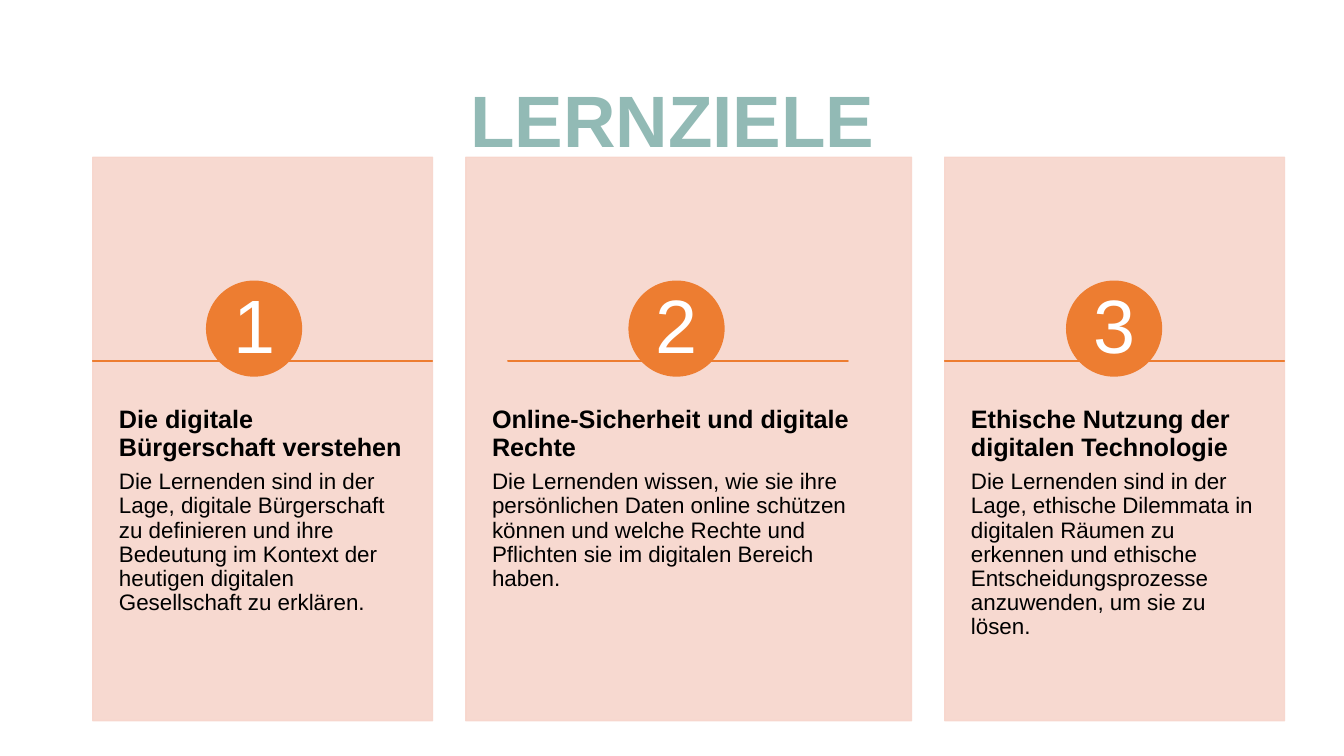
import lxml.etree
import pptx
import pptx.dml.color
import pptx.enum.shapes
import pptx.enum.text
import pptx.oxml.ns
import pptx.util

Inches = pptx.util.Inches
Pt = pptx.util.Pt
SHAPES = pptx.enum.shapes.MSO_SHAPE
ALIGN = pptx.enum.text.PP_ALIGN
ANCHOR = pptx.enum.text.MSO_ANCHOR

COLOURS = {"title": "92BAB5", "card": "F7D5CB", "accent": "ED7D31",
           "text": "000000", "number": "FFFFFF"}
FONT = "Arial"
CARD_LEFT, CARD_TOP, CARD_HEIGHT, CARD_GAP = 0.92, 1.56, 5.59, 0.33
RULE_WIDTH, RULE_DROP = 3.37, 2.02
CIRCLE_SIZE, CIRCLE_DROP = 0.94, 1.23
NUMBER_SIZE = 0.67

GOALS = [
    {"width": 3.37, "circle": 1.13, "rule": 0,
     "heading": "Die digitale Bürgerschaft verstehen",
     "body": "Die Lernenden sind in der Lage, digitale Bürgerschaft zu definieren und ihre "
             "Bedeutung im Kontext der heutigen digitalen Gesellschaft zu erklären."},
    {"width": 4.42, "circle": 1.62, "rule": 0.42,
     "heading": "Online-Sicherheit und digitale Rechte",
     "body": "Die Lernenden wissen, wie sie ihre persönlichen Daten online schützen können "
             "und welche Rechte und Pflichten sie im digitalen Bereich haben."},
    {"width": 3.37, "circle": 1.21, "rule": 0,
     "heading": "Ethische Nutzung der digitalen Technologie",
     "body": "Die Lernenden sind in der Lage, ethische Dilemmata in digitalen Räumen zu "
             "erkennen und ethische Entscheidungsprozesse anzuwenden, um sie zu lösen."},
]


def colour(name):
    """Return the named colour."""
    return pptx.dml.color.RGBColor.from_string(COLOURS[name])


def add_filled(page, kind, box, name, opacity=100):
    """Draw a preset shape whose fill and outline share one colour."""
    shape = page.shapes.add_shape(kind, *map(Inches, box))
    shape.shadow.inherit = False
    shape.fill.solid()
    shape.fill.fore_color.rgb = colour(name)
    shape.line.color.rgb = colour(name)
    shape.line.width = Pt(1)
    if opacity < 100:
        for tint in shape._element.spPr.iter(pptx.oxml.ns.qn("a:srgbClr")):
            alpha = lxml.etree.SubElement(tint, pptx.oxml.ns.qn("a:alpha"))
            alpha.set("val", str(opacity * 1000))


def add_text(page, box, insets, anchor=ANCHOR.TOP):
    """Add an empty wrapping text box and return its frame."""
    frame = page.shapes.add_textbox(*map(Inches, box)).text_frame
    frame.word_wrap = True
    frame.vertical_anchor = anchor
    frame.margin_left = frame.margin_right = Inches(insets[0])
    frame.margin_top = frame.margin_bottom = Inches(insets[1])
    return frame


def write(para, words, size, name, bold=False, align=ALIGN.LEFT, before=0):
    """Write one run into a paragraph and style both."""
    para.alignment = align
    para.line_spacing = 0.9
    para.space_before = Pt(before)
    span = para.add_run()
    span.text = words
    span.font.name = FONT
    span.font.size = Pt(size)
    span.font.bold = bold
    span.font.color.rgb = colour(name)


def add_title(page, box):
    """Place the centred slide title."""
    frame = add_text(page, box, (0.1, 0.05), ANCHOR.MIDDLE)
    write(frame.paragraphs[0], "LERNZIELE", 52, "title", True, ALIGN.CENTER)


def add_goal(page, box, number, goal):
    """Place one learning goal card with its text, rule and numbered circle."""
    left, top, width, height = box
    add_filled(page, SHAPES.RECTANGLE, box, "card", 90)

    frame = add_text(page, (left, top + 2.12, width, height - 2.24), (0.26, 0.36))
    write(frame.paragraphs[0], goal["heading"], 18, "text", True)
    write(frame.add_paragraph(), goal["body"], 16, "text", before=6.3)

    add_filled(page, SHAPES.RECTANGLE,
               (left + goal["rule"], top + RULE_DROP, RULE_WIDTH, 0), "accent")
    circle_left, circle_top = left + goal["circle"], top + CIRCLE_DROP
    add_filled(page, SHAPES.OVAL,
               (circle_left, circle_top, CIRCLE_SIZE, CIRCLE_SIZE), "accent")

    inset = (CIRCLE_SIZE - NUMBER_SIZE) / 2
    frame = add_text(page, (circle_left + inset, circle_top + inset, NUMBER_SIZE, NUMBER_SIZE),
                     (0.07, 0.01), ANCHOR.MIDDLE)
    write(frame.paragraphs[0], str(number), 54, "number", align=ALIGN.CENTER)


def main():
    """Build and save the deck."""
    deck = pptx.Presentation()
    deck.slide_width, deck.slide_height = Inches(13.33), Inches(7.5)
    page = deck.slides.add_slide(deck.slide_layouts[6])
    add_title(page, (0.92, 0.61, 11.5, 1.24))
    left = CARD_LEFT
    for number, goal in enumerate(GOALS, 1):
        add_goal(page, (left, CARD_TOP, goal["width"], CARD_HEIGHT), number, goal)
        left += goal["width"] + CARD_GAP
    deck.save("out.pptx")


if __name__ == "__main__":
    main()
